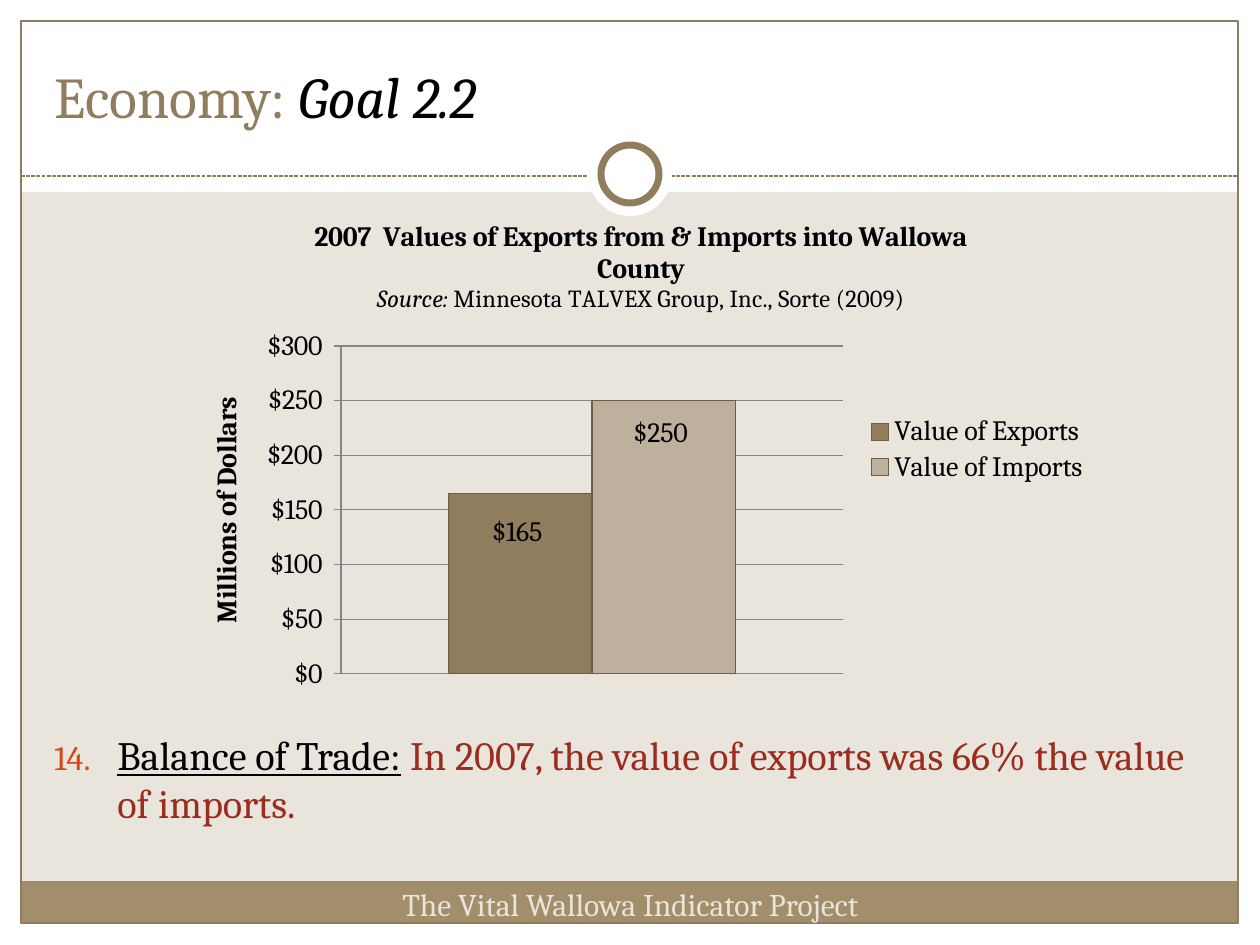
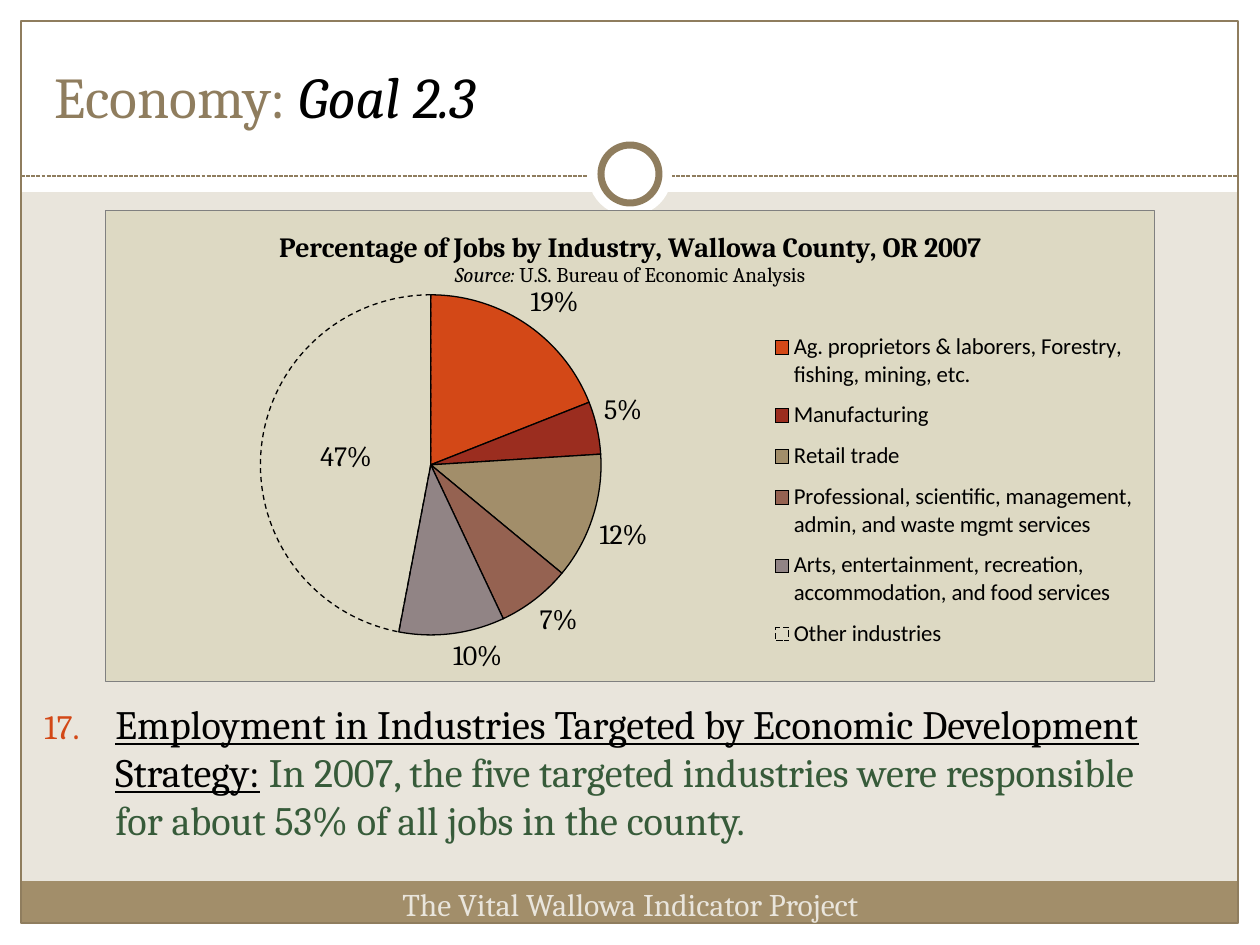
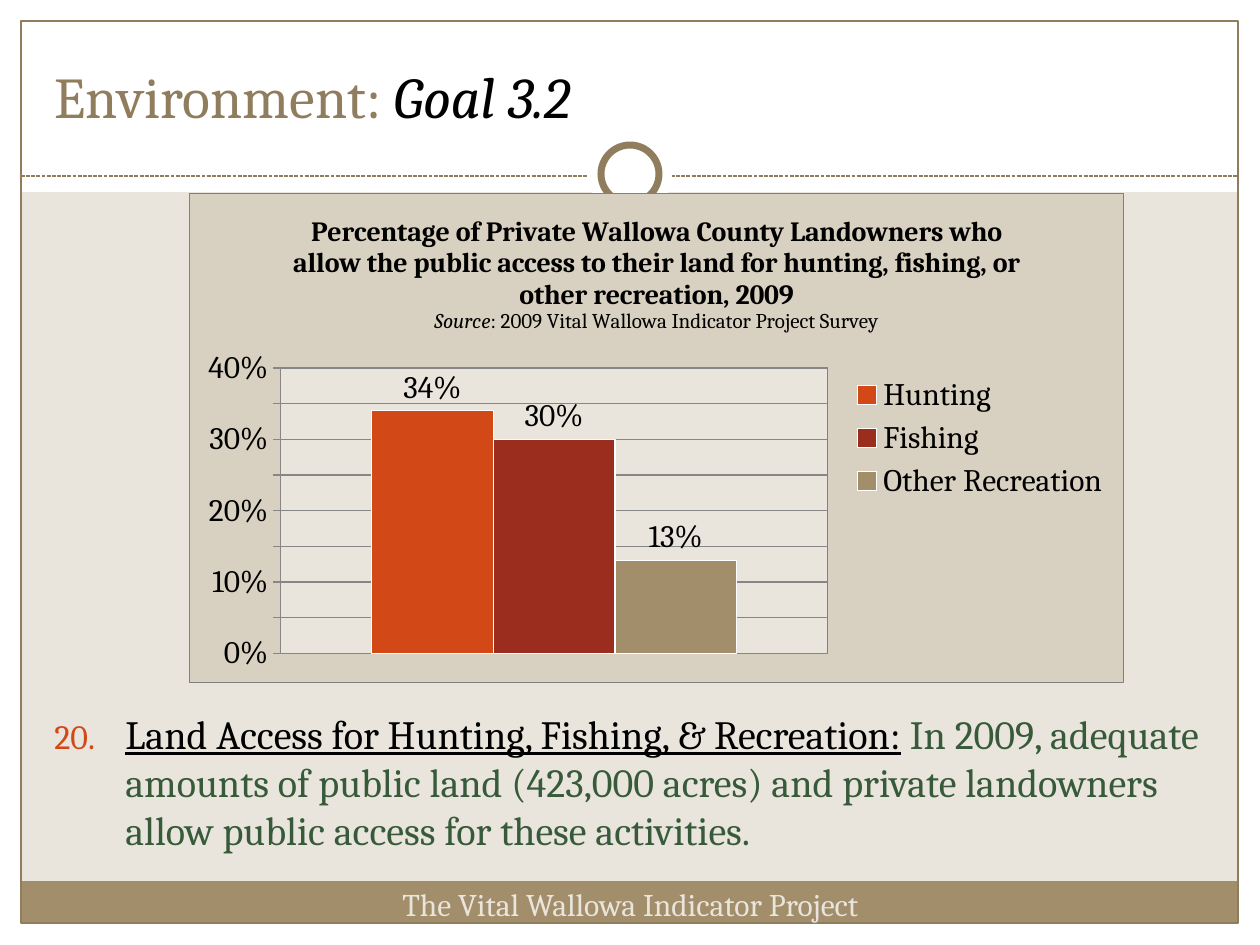
from lxml.etree import SubElement
from pptx import Presentation
from pptx.chart.data import CategoryChartData
from pptx.dml.color import RGBColor
from pptx.enum.chart import XL_CHART_TYPE, XL_LABEL_POSITION, XL_LEGEND_POSITION, XL_TICK_MARK
from pptx.enum.dml import MSO_LINE
from pptx.enum.shapes import MSO_CONNECTOR, MSO_SHAPE
from pptx.enum.text import MSO_ANCHOR, PP_ALIGN
from pptx.oxml.ns import qn
from pptx.util import Emu, Pt

COLORS = {
    "paper": "E9E5DC", "white": "FFFFFF", "black": "000000", "tan": "A28E6A",
    "brown": "8F7D5E", "orange": "D34817", "red": "9B2D1F", "green": "375B3A",
    "clay": "956251", "mauve": "918485", "sand": "BDB09C", "edge": "6F5E41",
    "khaki": "DDD9C3", "stone": "D8D0C0", "gray": "808080", "grid": "868686",
}
FONT = "Cambria"
FOOTER = "The Vital Wallowa Indicator Project"
DOLLARS = '"$"#,##0_);[Red]\\("$"#,##0\\)'

# Content: boxes are left, top, width, height in px
SLIDES = [
    {
        "title": ("Economy: ", "Goal 2.2"),
        "body": {"box": (42, 724, 1172, 147), "number": 14, "indent": 63, "color": "red",
                 "size": 23, "lead": "Balance of Trade:",
                 "text": "In 2007, the value of exports was 66% the value of imports."},
        "chart": {
            "kind": "column", "box": (179, 199, 924, 500), "plot": (341, 346, 502, 328),
            "legend": (866, 412, 222, 75), "legend_font": (16, FONT),
            "title": "2007  Values of Exports from & Imports into Wallowa County",
            "source": ("Source:", " Minnesota TALVEX Group, Inc., Sorte (2009)", 14),
            "categories": ["1"], "format": DOLLARS, "size": 16,
            "series": [("Value of Exports", [165]), ("Value of Imports", [250])],
            "colors": ["brown", "sand"], "line": "edge", "axis": (300, 50),
            "axis_title": ("Millions of Dollars", (203, 392)),
            "label_shifts": [(0, 18), (0, 12)],
        },
    },
    {
        "title": ("Economy: ", "Goal 2.3"),
        "body": {"box": (32, 693, 1172, 168), "number": 17, "indent": 71, "color": "green",
                 "size": 23,
                 "lead": "Employment in Industries Targeted by Economic Development Strategy:",
                 "text": "In 2007, the five targeted industries were responsible for about "
                         "53% of all jobs in the county."},
        "chart": {
            "kind": "pie", "box": (105, 210, 1050, 472), "plot": (260, 283, 341, 364),
            "legend": (768, 320, 372, 342), "legend_font": (13, "Calibri"),
            "title": "Percentage of Jobs by Industry, Wallowa County, OR 2007",
            "source": ("Source:", " U.S. Bureau of Economic Analysis", 12),
            "categories": [
                "Ag. proprietors & laborers, Forestry, fishing, mining, etc.",
                "Manufacturing",
                "Retail trade",
                "Professional, scientific, management, admin, and waste mgmt services",
                "Arts, entertainment, recreation, accommodation, and food services",
                "Other industries",
            ],
            "format": "0%", "size": 16, "fill": "khaki",
            "series": [("Series 1", [0.19, 0.05, 0.12, 0.07, 0.10, 0.47])],
            "colors": ["orange", "red", "tan", "clay", "mauve", None], "line": "black",
        },
    },
    {
        "title": ("Environment: ", "Goal 3.2"),
        "body": {"box": (42, 703, 1172, 158), "number": 20, "indent": 71, "color": "green",
                 "size": 22.9, "lead": "Land Access for Hunting, Fishing, & Recreation:",
                 "text": "In 2009, adequate amounts of public land (423,000 acres) and "
                         "private landowners allow public access for these activities."},
        "chart": {
            "kind": "column", "box": (189, 193, 935, 490), "plot": (280, 368, 548, 286),
            "legend": (853, 370, 255, 136), "legend_font": (18, FONT),
            "title": "Percentage of Private Wallowa County Landowners who allow the public "
                     "access to their land for hunting, fishing, or other recreation, 2009",
            "source": ("Source", ": 2009 Vital Wallowa Indicator Project Survey", 12),
            "categories": ["1"], "format": "0%", "size": 18, "fill": "stone",
            "series": [("Hunting", [0.34]), ("Fishing", [0.30]), ("Other Recreation", [0.13])],
            "colors": ["orange", "red", "tan"], "line": "white", "axis": (0.4, 0.05),
            "plot_fill": "paper",
        },
    },
]


def px(n):
    return Emu(round(n * 914400 / 126))


def rgb(name):
    return RGBColor.from_string(COLORS[name])


def set_font(font, color="black", **values):
    for key, value in {"name": FONT, **values}.items():
        setattr(font, key, value)
    font.color.rgb = rgb(color)


def add_run(p, text, size, color="black", **values):
    r = p.add_run()
    r.text = text
    set_font(r.font, color, size=Pt(size), **values)


def paint(part, fill, line=None, width=0.75):
    if fill:
        part.fill.solid()
        part.fill.fore_color.rgb = rgb(fill)
    else:
        part.fill.background()
    if line:
        part.line.color.rgb = rgb(line)
        part.line.width = Pt(width)
    else:
        part.line.fill.background()


def add_text(s, box, anchor=MSO_ANCHOR.TOP):
    tf = s.shapes.add_textbox(*map(px, box)).text_frame
    tf.word_wrap = True
    tf.vertical_anchor = anchor
    return tf.paragraphs[0]


# Shared frame, title and footer
FRAME = [
    (MSO_SHAPE.RECTANGLE, (0, 924, 1260, 21), "white", None, 0),
    (MSO_SHAPE.RECTANGLE, (0, 0, 1260, 192), "white", None, 0),
    (MSO_SHAPE.RECTANGLE, (0, 0, 21, 945), "white", None, 0),
    (MSO_SHAPE.RECTANGLE, (1239, 0, 21, 945), "white", None, 0),
    (MSO_SHAPE.RECTANGLE, (21, 881, 1217, 43), "tan", None, 0),
    (MSO_SHAPE.RECTANGLE, (21, 21, 1217, 902), None, "brown", 0.75),
    (None, (21, 176, 1239, 176), None, "brown", 0.75),
    (MSO_SHAPE.OVAL, (588, 132, 84, 84), "white", None, 0),
    (MSO_SHAPE.OVAL, (601, 145, 58, 58), "white", "brown", 4),
]


def add_frame(s, title):
    s.background.fill.solid()
    s.background.fill.fore_color.rgb = rgb("paper")
    for kind, box, fill, line, width in FRAME:
        if kind is None:
            rule = s.shapes.add_connector(MSO_CONNECTOR.STRAIGHT, *map(px, box))
            rule.line.color.rgb = rgb(line)
            rule.line.width = Pt(width)
            rule.line.dash_style = MSO_LINE.SQUARE_DOT
            SubElement(rule._element.spPr, qn("a:effectLst"))
        else:
            sp = s.shapes.add_shape(kind, *map(px, box))
            sp.shadow.inherit = False
            paint(sp, fill, line, width)

    p = add_text(s, (42, 32, 1176, 104), MSO_ANCHOR.BOTTOM)
    add_run(p, title[0], 33, "brown")
    add_run(p, title[1], 33, italic=True)

    p = add_text(s, (347, 879, 567, 50))
    p.alignment = PP_ALIGN.CENTER
    add_run(p, FOOTER, 18, "paper")


def add_body(s, body):
    p = add_text(s, body["box"])
    add_run(p, body["lead"], body["size"], underline=True)
    add_run(p, " ", body["size"])
    add_run(p, body["text"], body["size"], body["color"])
    # Numbered bullet with hanging indent
    pPr = p._p.get_or_add_pPr()
    pPr.set("marL", str(px(body["indent"])))
    pPr.set("indent", str(-px(body["indent"])))
    SubElement(SubElement(pPr, qn("a:buClr")), qn("a:srgbClr"), val=COLORS["orange"])
    SubElement(pPr, qn("a:buSzPct"), val="85000")
    SubElement(pPr, qn("a:buFont"), typeface=FONT)
    SubElement(pPr, qn("a:buAutoNum"), type="arabicPeriod", startAt=str(body["number"]))


# Chart parts that need XML
def place(element, index, values, edge=False, inner=False):
    for old in element.findall(qn("c:layout")):
        element.remove(old)
    layout = element.makeelement(qn("c:layout"))
    manual = SubElement(layout, qn("c:manualLayout"))
    if inner:
        SubElement(manual, qn("c:layoutTarget"), val="inner")
    if edge:
        for mode in ("xMode", "yMode"):
            SubElement(manual, qn(f"c:{mode}"), val="edge")
    for name, value in zip("xywh", values):
        SubElement(manual, qn(f"c:{name}"), val=f"{value:.4f}")
    element.insert(index, layout)


def area_format(parent, fill, line):
    spPr = parent.makeelement(qn("c:spPr"))
    ln = SubElement(spPr, qn("a:ln"), w=str(Pt(0.75)))
    for holder, color in ((spPr, fill), (ln, line)):
        paint_el = holder.makeelement(qn("a:solidFill" if color else "a:noFill"))
        if color:
            SubElement(paint_el, qn("a:srgbClr"), val=COLORS[color])
        holder.insert(0, paint_el)
    return spPr


def fraction(box, chart_box):
    left, top, width, height = chart_box
    offsets = (left, top, 0, 0)
    return [(v - o) / d for v, o, d in zip(box, offsets, (width, height, width, height))]


def format_axes(chart, c):
    chart.category_axis.visible = False
    axis = chart.value_axis
    axis.minimum_scale = 0
    axis.maximum_scale, axis.major_unit = c["axis"]
    axis.major_tick_mark = XL_TICK_MARK.CROSS
    axis.has_major_gridlines = True
    for line in (axis.format.line, axis.major_gridlines.format.line):
        line.color.rgb = rgb("grid")
        line.width = Pt(0.75)
    labels = axis.tick_labels
    labels.number_format, labels.number_format_is_linked = c["format"], False
    set_font(labels.font, size=Pt(c["size"]))
    if "axis_title" in c:
        text, spot = c["axis_title"]
        tf = axis.axis_title.text_frame
        add_run(tf.paragraphs[0], text, 16, bold=True)
        tf._bodyPr.set("rot", "-5400000")
        tf._bodyPr.set("vert", "horz")
        place(axis.axis_title._element, 1, fraction(spot, c["box"]), edge=True)


def format_labels(series, c):
    labels = series.data_labels
    labels.show_value = True
    labels.show_percentage = False
    labels.number_format, labels.number_format_is_linked = c["format"], False
    labels.position = XL_LABEL_POSITION.OUTSIDE_END
    set_font(labels.font, size=Pt(c["size"]))
    for leader in labels._element.findall(qn("c:showLeaderLines")):
        leader.set("val", "0")


def move_label(point, position, c):
    label = point.data_label
    set_font(label.font, size=Pt(c["size"]))
    label.position = position
    return label


def add_chart(s, c):
    data = CategoryChartData(number_format=c["format"])
    data.categories = c["categories"]
    for name, values in c["series"]:
        data.add_series(name, values)
    pie = c["kind"] == "pie"
    kind = XL_CHART_TYPE.PIE if pie else XL_CHART_TYPE.COLUMN_CLUSTERED
    chart = s.shapes.add_chart(kind, *map(px, c["box"]), data).chart
    set_font(chart.font, size=Pt(c["size"]))
    plot = chart.plots[0]
    plot.vary_by_categories = pie

    # Title and source
    tf = chart.chart_title.text_frame
    add_run(tf.paragraphs[0], c["title"], 16, bold=True)
    p = tf.add_paragraph()
    lead, source, size = c["source"]
    add_run(p, lead, size, bold=False, italic=True)
    add_run(p, source, size, bold=False, italic=False)
    chart.chart_title.include_in_layout = False

    # Legend
    chart.has_legend = True
    legend = chart.legend
    legend.position = XL_LEGEND_POSITION.RIGHT
    legend.include_in_layout = False
    size, name = c["legend_font"]
    set_font(legend.font, size=Pt(size), name=name)
    place(legend._element, 1, fraction(c["legend"], c["box"]), edge=True)

    # Data labels and colours
    for series in plot.series:
        format_labels(series, c)
    parts = ([plot.series[0].points[i] for i in range(len(c["colors"]))]
             if pie else list(plot.series))
    for part, color in zip(parts, c["colors"]):
        paint(part.format, color, c["line"])
        if color is None:
            part.format.line.dash_style = MSO_LINE.DASH
            move_label(part, XL_LABEL_POSITION.CENTER, c)
    for series, (dx, dy) in zip(plot.series, c.get("label_shifts", [])):
        label = move_label(series.points[0], XL_LABEL_POSITION.INSIDE_END, c)
        place(label._dLbl, 1, (dx / c["box"][2], dy / c["box"][3]))

    if not pie:
        plot.gap_width, plot.overlap = 150, 0
        format_axes(chart, c)

    # Chart area and plot area
    space = chart.element
    chart_el = space.find(qn("c:chart"))
    plot_el = chart_el.find(qn("c:plotArea"))
    fill, plot_fill = c.get("fill"), c.get("plot_fill")
    chart_el.addnext(area_format(space, fill, "gray" if fill else None))
    plot_el.append(area_format(plot_el, plot_fill, "gray" if plot_fill else None))
    place(plot_el, 0, fraction(c["plot"], c["box"]), edge=True, inner=True)


def main():
    prs = Presentation()
    prs.slide_width, prs.slide_height = px(1260), px(945)
    for content in SLIDES:
        s = prs.slides.add_slide(prs.slide_layouts[6])
        add_frame(s, content["title"])
        add_body(s, content["body"])
        add_chart(s, content["chart"])
    prs.save("out.pptx")


if __name__ == "__main__":
    main()
